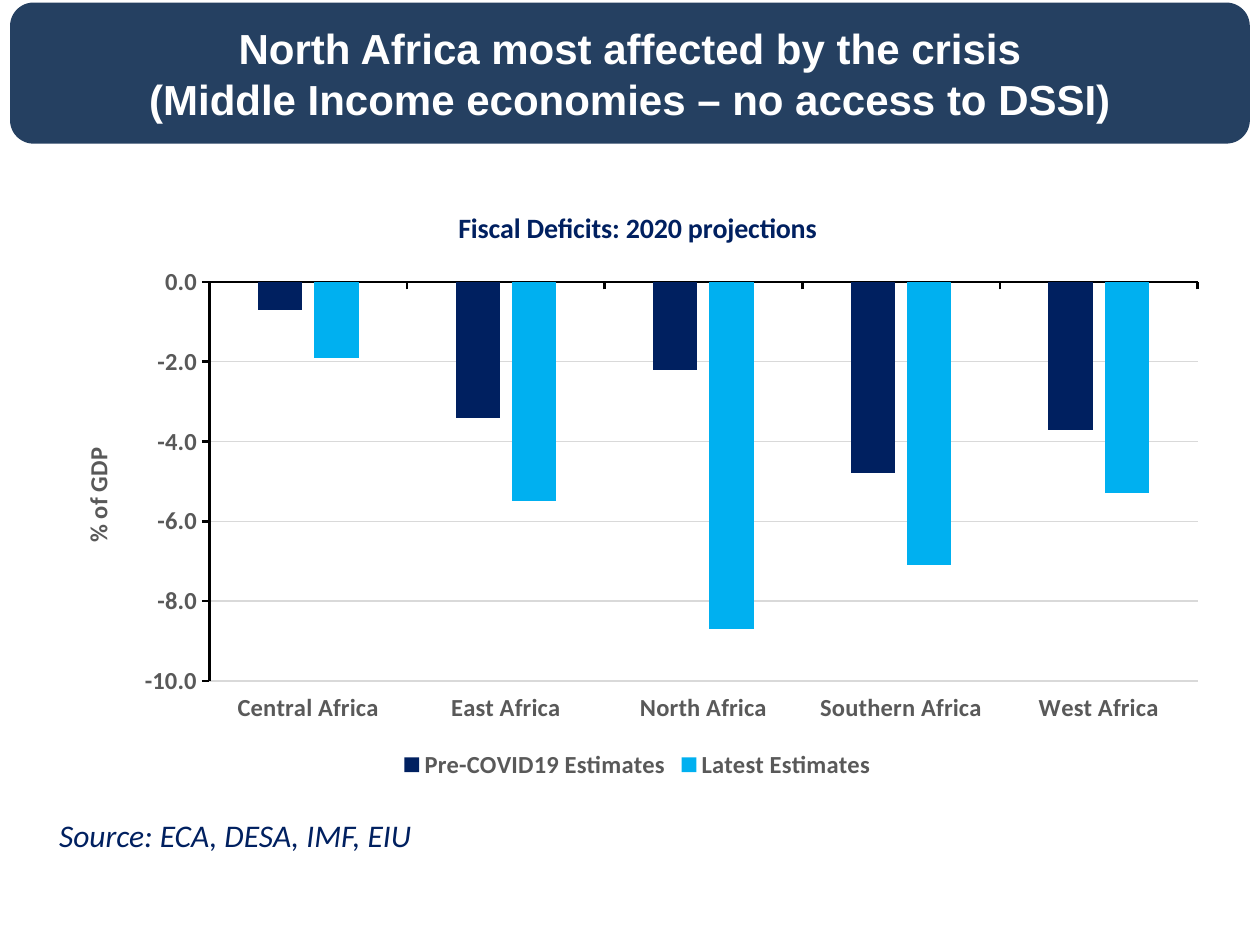
from pptx import Presentation
from pptx.chart.data import CategoryChartData
from pptx.dml.color import RGBColor
from pptx.enum.chart import XL_CHART_TYPE, XL_LEGEND_POSITION, XL_TICK_LABEL_POSITION, XL_TICK_MARK
from pptx.enum.shapes import MSO_SHAPE
from pptx.enum.text import MSO_ANCHOR, PP_ALIGN
from pptx.util import Pt

NAVY, SKY, GREY = "002060", "00B0F0", "595959"


def color(value):
    return RGBColor.from_string(value)


def set_font(font, name, size, hex_color, bold=False, italic=False):
    font.name, font.size, font.bold, font.italic = name, Pt(size), bold, italic
    font.color.rgb = color(hex_color)


prs = Presentation()
prs.slide_width, prs.slide_height = Pt(720), Pt(540)
slide = prs.slides.add_slide(prs.slide_layouts[6])

# Heading banner
banner = slide.shapes.add_shape(MSO_SHAPE.ROUNDED_RECTANGLE, Pt(5.76), Pt(1.44), Pt(708.48), Pt(80.64))
banner.shadow.inherit = False
banner.fill.solid()
banner.fill.fore_color.rgb = color("254061")
banner.line.fill.background()
heading = banner.text_frame
heading.word_wrap = True
heading.vertical_anchor = MSO_ANCHOR.MIDDLE
heading.margin_left = heading.margin_right = heading.margin_top = heading.margin_bottom = Pt(7.2)
heading_lines = ["North Africa most affected by the crisis",
                 "(Middle Income economies – no access to DSSI)"]
for i, line in enumerate(heading_lines):
    paragraph = heading.add_paragraph() if i else heading.paragraphs[0]
    paragraph.alignment = PP_ALIGN.CENTER
    run = paragraph.add_run()
    run.text = line
    set_font(run.font, "Arial", 24, "FFFFFF", bold=True)

# Source line
source = slide.shapes.add_textbox(Pt(26.64), Pt(462.96), Pt(289.44), Pt(28.8)).text_frame
source.word_wrap = True
run = source.paragraphs[0].add_run()
run.text = "Source: ECA, DESA, IMF, EIU"
set_font(run.font, "Calibri", 18, NAVY, italic=True)

# Fiscal deficit chart
deficits = CategoryChartData(number_format="0.0")
deficits.categories = ["Central Africa", "East Africa", "North Africa", "Southern Africa", "West Africa"]
deficits.add_series("Pre-COVID19 Estimates", [-0.7, -3.4, -2.2, -4.8, -3.7])
deficits.add_series("Latest Estimates", [-1.9, -5.5, -8.7, -7.1, -5.3])
chart = slide.shapes.add_chart(XL_CHART_TYPE.COLUMN_CLUSTERED, Pt(30.96), Pt(105.84),
                               Pt(666.72), Pt(342.72), deficits).chart
set_font(chart.font, "Calibri", 10, "000000")

plot = chart.plots[0]
plot.gap_width, plot.overlap = 219, -27
plot.vary_by_categories = False
for series, fill in zip(plot.series, [NAVY, SKY]):
    series.invert_if_negative = False
    series.format.fill.solid()
    series.format.fill.fore_color.rgb = color(fill)

regions, gdp_share = chart.category_axis, chart.value_axis
for axis in (regions, gdp_share):
    axis.major_tick_mark = XL_TICK_MARK.OUTSIDE
    axis.minor_tick_mark = XL_TICK_MARK.NONE
    axis.format.line.color.rgb = color("000000")
    axis.format.line.width = Pt(1.5)
    set_font(axis.tick_labels.font, "Calibri", 14, GREY, bold=True)
regions.tick_label_position = XL_TICK_LABEL_POSITION.LOW
gdp_share.minimum_scale, gdp_share.maximum_scale, gdp_share.major_unit = -10, 0, 2
gdp_share.tick_labels.number_format = "0.0"
gdp_share.tick_labels.number_format_is_linked = False
gridlines = gdp_share.major_gridlines.format.line
gridlines.color.rgb = color("D9D9D9")
gridlines.width = Pt(0.75)

for owner, title, size, tint in [(chart.chart_title, "Fiscal Deficits: 2020 projections", 16, NAVY),
                                 (gdp_share.axis_title, "% of GDP", 14, GREY)]:
    run = owner.text_frame.paragraphs[0].add_run()
    run.text = title
    set_font(run.font, "Calibri", size, tint, bold=True)
chart.chart_title.include_in_layout = False

chart.has_legend = True
chart.legend.position = XL_LEGEND_POSITION.BOTTOM
chart.legend.include_in_layout = False
set_font(chart.legend.font, "Calibri", 14, GREY, bold=True)

prs.save("out.pptx")
